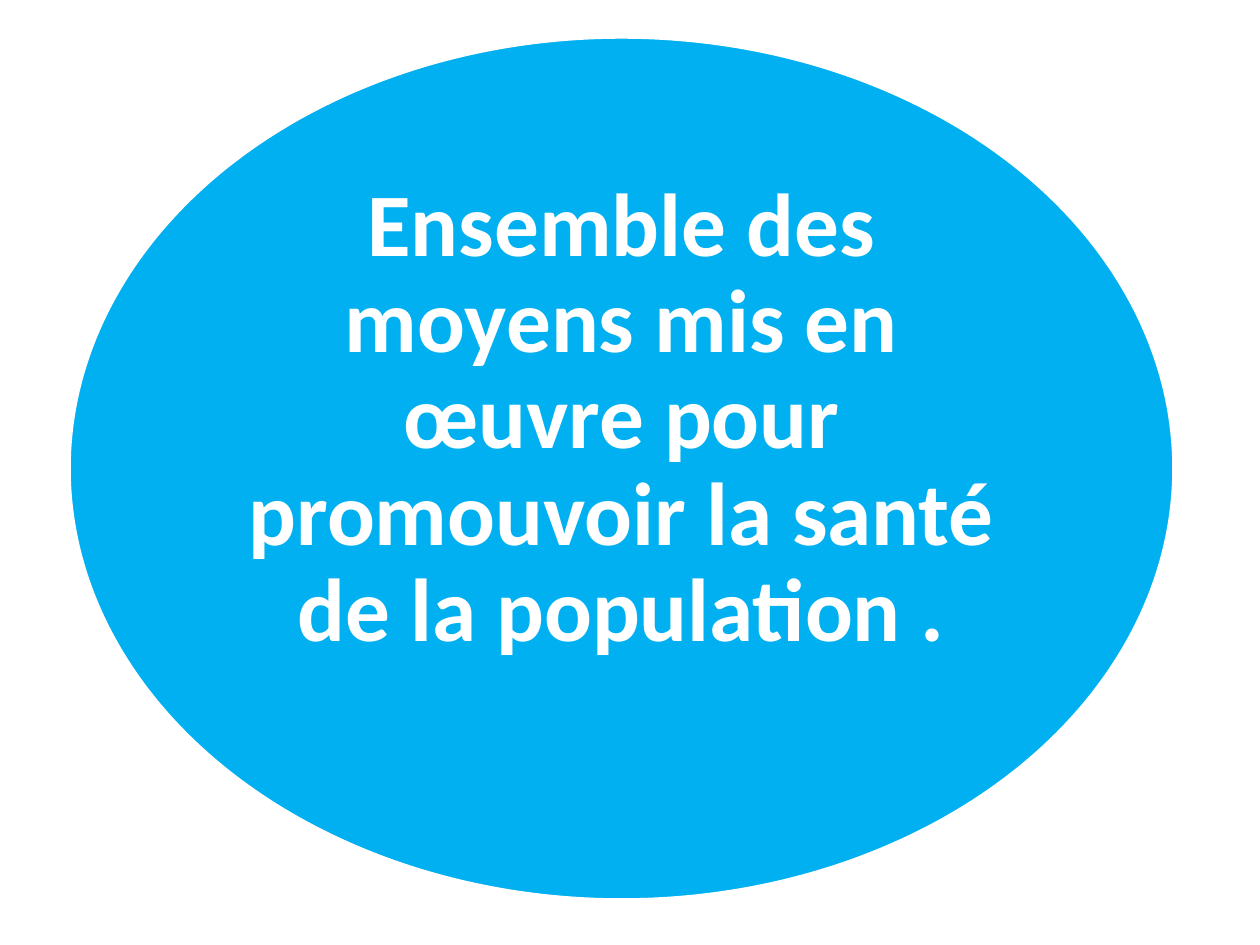
from pptx import Presentation
from pptx.dml.color import RGBColor
from pptx.enum.shapes import MSO_SHAPE as SHAPE
from pptx.enum.text import MSO_ANCHOR as ANCHOR, PP_ALIGN as ALIGN
from pptx.util import Emu, Pt

EMU_PER_PX = 914400 / 126
COLORS = {"sky": "00B0F0", "white": "FFFFFF"}
DEFINITION = (
    "Ensemble des moyens mis en œuvre pour promouvoir "
    "la santé de la population ."
)


def px(n):
    return Emu(round(n * EMU_PER_PX))


def rgb(name):
    return RGBColor.from_string(COLORS[name])


def add_ellipse(slide, box, fill, line, width):
    sp = slide.shapes.add_shape(SHAPE.OVAL, *map(px, box))
    sp.shadow.inherit = False
    sp.fill.solid()
    sp.fill.fore_color.rgb = rgb(fill)
    sp.line.color.rgb = rgb(line)
    sp.line.width = Pt(width)
    return sp


def add_text(slide, box, text, *, size, color, font="Calibri", bold=False,
             spacing=1.0, inset=9, bottom=9):
    tf = slide.shapes.add_textbox(*map(px, box)).text_frame
    tf.word_wrap = True
    tf.vertical_anchor = ANCHOR.MIDDLE
    tf.margin_left = tf.margin_right = tf.margin_top = px(inset)
    tf.margin_bottom = px(bottom)
    p = tf.paragraphs[0]
    p.alignment = ALIGN.CENTER
    p.line_spacing = spacing
    r = p.add_run()
    r.text = text
    r.font.name = font
    r.font.size = Pt(size)
    r.font.bold = bold
    r.font.color.rgb = rgb(color)


def main():
    prs = Presentation()
    prs.slide_width, prs.slide_height = px(1260), px(945)
    slide = prs.slides.add_slide(prs.slide_layouts[6])
    add_ellipse(slide, (69, 37, 1105, 863), "sky", "white", 2)
    add_text(slide, (231, 163, 781, 610), DEFINITION, size=51,
             color="white", bold=True, spacing=0.9, bottom=105)
    prs.save("out.pptx")


if __name__ == "__main__":
    main()
